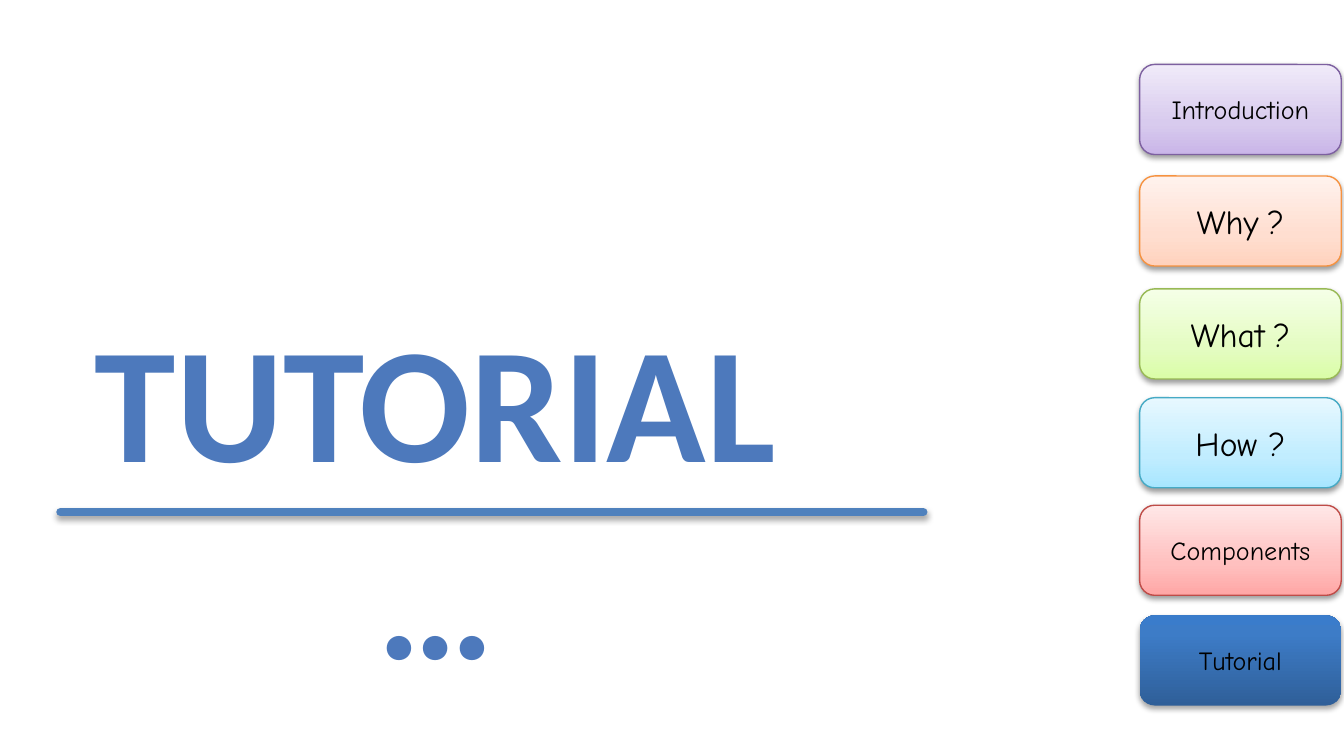
from lxml import etree
from pptx import Presentation
from pptx.dml.color import RGBColor
from pptx.enum.shapes import MSO_CONNECTOR, MSO_SHAPE
from pptx.enum.text import MSO_ANCHOR, PP_ALIGN
from pptx.oxml.ns import qn
from pptx.util import Inches, Pt

ROUNDED = MSO_SHAPE.ROUNDED_RECTANGLE
STRAIGHT = MSO_CONNECTOR.STRAIGHT
MIDDLE = MSO_ANCHOR.MIDDLE
CENTER = PP_ALIGN.CENTER

BLACK = RGBColor(0x00, 0x00, 0x00)
TITLE_BLUE = RGBColor(0x4D, 0x79, 0xBC)
RULE_BLUE = RGBColor(0x4F, 0x81, 0xBD)
PURPLE = RGBColor(0x7D, 0x60, 0xA0)
ORANGE = RGBColor(0xF6, 0x92, 0x40)
GREEN = RGBColor(0x98, 0xB9, 0x55)
TEAL = RGBColor(0x46, 0xAA, 0xC5)
RED = RGBColor(0xBF, 0x4C, 0x48)


def stops(middle, *colors):
    """Pair three colours with positions 0, middle and 100 percent."""
    return list(zip((0, middle, 100), map(RGBColor.from_string, colors)))


# Top, text runs with sizes, gradient from bottom to top, outline
BUTTONS = [
    (0.48, [("Introduction", 14)], stops(35, "C9B5E8", "D8CBEE", "F0EAF9"), PURPLE),
    (1.31, [("Why", 18), (" ", 14), ("?", 18)],
     stops(35, "FFD2BD", "FFDED0", "FFF2ED"), ORANGE),
    (2.15, [("What", 18), (" ", 14), ("?", 18)],
     stops(35, "DAFDA7", "E4FCC2", "F5FFE7"), GREEN),
    (2.96, [("How ?", 18)], stops(35, "A7E6FF", "C1EDFF", "E7F8FF"), TEAL),
    (3.76, [("Components", 14)], stops(35, "FFA6A5", "FFC0BF", "FFE7E7"), RED),
    (4.58, [("Tutorial", 14)], stops(80, "2F5F99", "3D7CC7", "3A7CCB"), None),
]


class SlideBuilder:
    title_font = "Calibri"
    button_font = "Comic Neue"

    def __init__(self, slide):
        self.slide = slide

    def add_shadow(self, shape, distance, opacity):
        effects = etree.SubElement(shape._element.spPr, qn("a:effectLst"))
        shadow = etree.SubElement(
            effects, qn("a:outerShdw"), blurRad=str(Pt(3.1)),
            dist=str(Pt(distance)), dir="5400000", rotWithShape="0")
        color = etree.SubElement(shadow, qn("a:srgbClr"), val=str(BLACK))
        etree.SubElement(color, qn("a:alpha"), val=str(opacity * 1000))

    def fill_gradient(self, shape, gradient):
        shape.fill.gradient()
        shape.fill.gradient_angle = 90
        stop_list = shape._element.spPr.find(qn("a:gradFill")).find(qn("a:gsLst"))
        for stop in list(stop_list):
            stop_list.remove(stop)
        for position, color in gradient:
            stop = etree.SubElement(stop_list, qn("a:gs"), pos=str(position * 1000))
            etree.SubElement(stop, qn("a:srgbClr"), val=str(color))

    def button(self, top, runs, gradient, outline):
        shape = self.slide.shapes.add_shape(
            ROUNDED, Inches(8.48), Inches(top), Inches(1.5), Inches(0.67))
        self.fill_gradient(shape, gradient)
        if outline is None:
            shape.line.fill.background()
            self.add_shadow(shape, 1.8, 35)
        else:
            shape.line.color.rgb = outline
            shape.line.width = Pt(0.75)
            self.add_shadow(shape, 1.6, 38)
        shape.text_frame.vertical_anchor = MIDDLE
        paragraph = shape.text_frame.paragraphs[0]
        paragraph.alignment = CENTER
        paragraph.font.name = self.button_font
        paragraph.font.color.rgb = BLACK
        for text, size in runs:
            run = paragraph.add_run()
            run.text = text
            run.font.size = Pt(size)

    def rule(self, left, right, top):
        line = self.slide.shapes.add_connector(
            STRAIGHT, Inches(left), Inches(top), Inches(right), Inches(top))
        line.line.color.rgb = RULE_BLUE
        line.line.width = Pt(4.5)
        line._element.spPr.find(qn("a:ln")).set("cap", "rnd")
        self.add_shadow(line, 1.8, 35)

    def title(self, text, left, top, width, height):
        box = self.slide.shapes.add_textbox(
            Inches(left), Inches(top), Inches(width), Inches(height))
        box.text_frame.word_wrap = True
        paragraph = box.text_frame.paragraphs[0]
        paragraph.text = text
        paragraph.alignment = CENTER
        paragraph.font.name = self.title_font
        paragraph.font.size = Pt(88)
        paragraph.font.bold = True
        paragraph.font.color.rgb = TITLE_BLUE


def main():
    # Widescreen slide, 16:9
    presentation = Presentation()
    presentation.slide_width = Inches(10)
    presentation.slide_height = Inches(10 * 9 / 16)
    builder = SlideBuilder(
        presentation.slides.add_slide(presentation.slide_layouts[6]))

    # Navigation buttons
    for button in BUTTONS:
        builder.button(*button)

    # Section title above its rule
    builder.rule(0.45, 6.87, 3.81)
    builder.title("TUTORIAL…", 0.45, 2.17, 5.58, 1.58)

    presentation.save("out.pptx")


if __name__ == "__main__":
    main()
